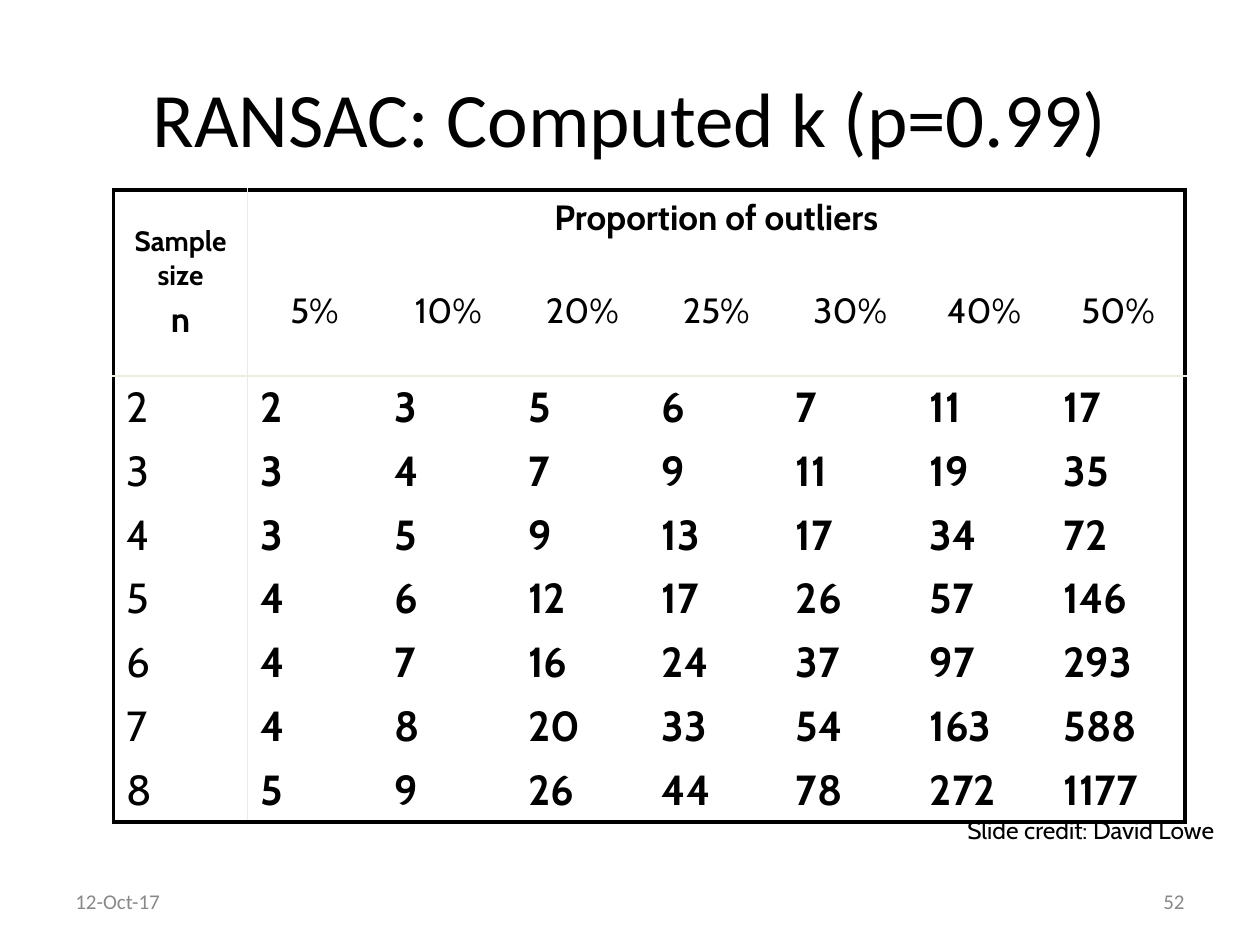
import lxml.etree
import pptx
import pptx.dml.color
import pptx.enum.text
import pptx.oxml.ns
import pptx.util
from pptx.util import Cm

ALIGN = pptx.enum.text.PP_ALIGN
ANCHOR = pptx.enum.text.MSO_ANCHOR
BLACK, CREAM, GREY = "000000", "EEECE1", "898989"
PROPORTIONS = ["5%", "10%", "20%", "25%", "30%", "40%", "50%"]
ITERATIONS = {
    2: [2, 3, 5, 6, 7, 11, 17],
    3: [3, 4, 7, 9, 11, 19, 35],
    4: [3, 5, 9, 13, 17, 34, 72],
    5: [4, 6, 12, 17, 26, 57, 146],
    6: [4, 7, 16, 24, 37, 97, 293],
    7: [4, 8, 20, 33, 54, 163, 588],
    8: [5, 9, 26, 44, 78, 272, 1177],
}


def color(value):
    """Turn a hex string into a colour."""
    return pptx.dml.color.RGBColor.from_string(value)


def style_paragraph(paragraph, text, size, font, hue=BLACK, bold=False, align=ALIGN.LEFT):
    """Fill a paragraph and set its font and alignment."""
    paragraph.text = text
    paragraph.alignment = align
    paragraph.font.size = pptx.util.Pt(size)
    paragraph.font.name = font
    paragraph.font.bold = bold
    paragraph.font.color.rgb = color(hue)


def add_text(slide, box, text, size, font, anchor=ANCHOR.MIDDLE, wrap=True, **style):
    """Add a one-paragraph text box."""
    frame = slide.shapes.add_textbox(*map(Cm, box)).text_frame
    frame.word_wrap = wrap
    frame.vertical_anchor = anchor
    style_paragraph(frame.paragraphs[0], text, size, font, **style)


def fill_cell(cell, lines, bold=False, align=ALIGN.LEFT):
    """Write (text, size) lines into a table cell."""
    cell.vertical_anchor = ANCHOR.MIDDLE
    frame = cell.text_frame
    for index, (text, size) in enumerate(lines):
        paragraph = frame.add_paragraph() if index else frame.paragraphs[0]
        style_paragraph(paragraph, text, size, "Cabin", bold=bold, align=align)
        paragraph.space_before = pptx.util.Pt(size * 0.2)


def set_border(cell, side, line):
    """Draw one side of a cell, or clear it when line is None."""
    properties = cell._tc.get_or_add_tcPr()
    border = lxml.etree.SubElement(properties, pptx.oxml.ns.qn(f"a:ln{side}"))
    if line is None:
        lxml.etree.SubElement(border, pptx.oxml.ns.qn("a:noFill"))
        return
    hue, width = line
    border.set("w", str(pptx.util.Pt(width)))
    fill = lxml.etree.SubElement(border, pptx.oxml.ns.qn("a:solidFill"))
    lxml.etree.SubElement(fill, pptx.oxml.ns.qn("a:srgbClr")).set("val", hue)


def draw_borders(table):
    """Frame the table and rule off its header row and column."""
    frame, rule = (BLACK, 2.25), (CREAM, 1)
    vertical = {0: frame, 1: rule, len(table.columns): frame}
    horizontal = {0: frame, 2: rule, len(table.rows): frame}
    for row in range(len(table.rows)):
        for column in range(len(table.columns)):
            cell = table.cell(row, column)
            width = cell.span_width if cell.is_merge_origin else 1
            height = cell.span_height if cell.is_merge_origin else 1
            set_border(cell, "L", vertical.get(column))
            set_border(cell, "R", vertical.get(column + width))
            set_border(cell, "T", horizontal.get(row))
            set_border(cell, "B", horizontal.get(row + height))
            cell.fill.background()


def add_iterations_table(slide, box):
    """Add the table of computed k by sample size and outlier proportion."""
    left, top, width, height = box
    heights = [1.14, 2.61] + [(height - 3.75) / len(ITERATIONS)] * len(ITERATIONS)
    columns = len(PROPORTIONS) + 1
    table = slide.shapes.add_table(len(heights), columns, *map(Cm, box)).table
    table.first_row = table.horz_banding = False
    for row, row_height in zip(table.rows, heights):
        row.height = Cm(row_height)
    for column in table.columns:
        column.width = Cm(width / columns)
    table.cell(0, 0).merge(table.cell(1, 0))
    table.cell(0, 1).merge(table.cell(0, columns - 1))
    fill_cell(table.cell(0, 0), [("Sample size", 16), ("n", 20)], True, ALIGN.CENTER)
    fill_cell(table.cell(0, 1), [("Proportion of outliers", 20)], True, ALIGN.CENTER)
    for column, proportion in enumerate(PROPORTIONS, 1):
        fill_cell(table.cell(1, column), [(proportion, 20)], align=ALIGN.CENTER)
    for row, (sample_size, counts) in enumerate(ITERATIONS.items(), 2):
        for column, value in enumerate([sample_size, *counts]):
            fill_cell(table.cell(row, column), [(str(value), 24)], bold=column > 0)
    draw_borders(table)


def add_footer(slide, box):
    """Add the date at the left and the slide number at the right."""
    left, top, width, height = box
    part = 5.93
    add_text(slide, (left, top, part, height), "12-Oct-17", 12, "Calibri", hue=GREY)
    add_text(slide, (left + width - part, top, part, height), "52", 12, "Calibri",
             hue=GREY, align=ALIGN.RIGHT)


def main():
    """Build and save the slide."""
    presentation = pptx.Presentation()
    presentation.slide_width, presentation.slide_height = Cm(25.4), Cm(19.05)
    slide = presentation.slides.add_slide(presentation.slide_layouts[6])
    add_text(slide, (1.27, 0.76, 22.86, 3.18), "RANSAC: Computed k (p=0.99)", 44,
             "Calibri", align=ALIGN.CENTER)
    add_iterations_table(slide, (2.29, 3.83, 21.6, 12.74))
    add_text(slide, (19.25, 16.31, 5.94, 0.86), "Slide credit: David Lowe", 14,
             "Cabin", anchor=ANCHOR.TOP, wrap=False)
    add_footer(slide, (1.27, 17.65, 22.86, 1.02))
    presentation.save("out.pptx")


if __name__ == "__main__":
    main()
